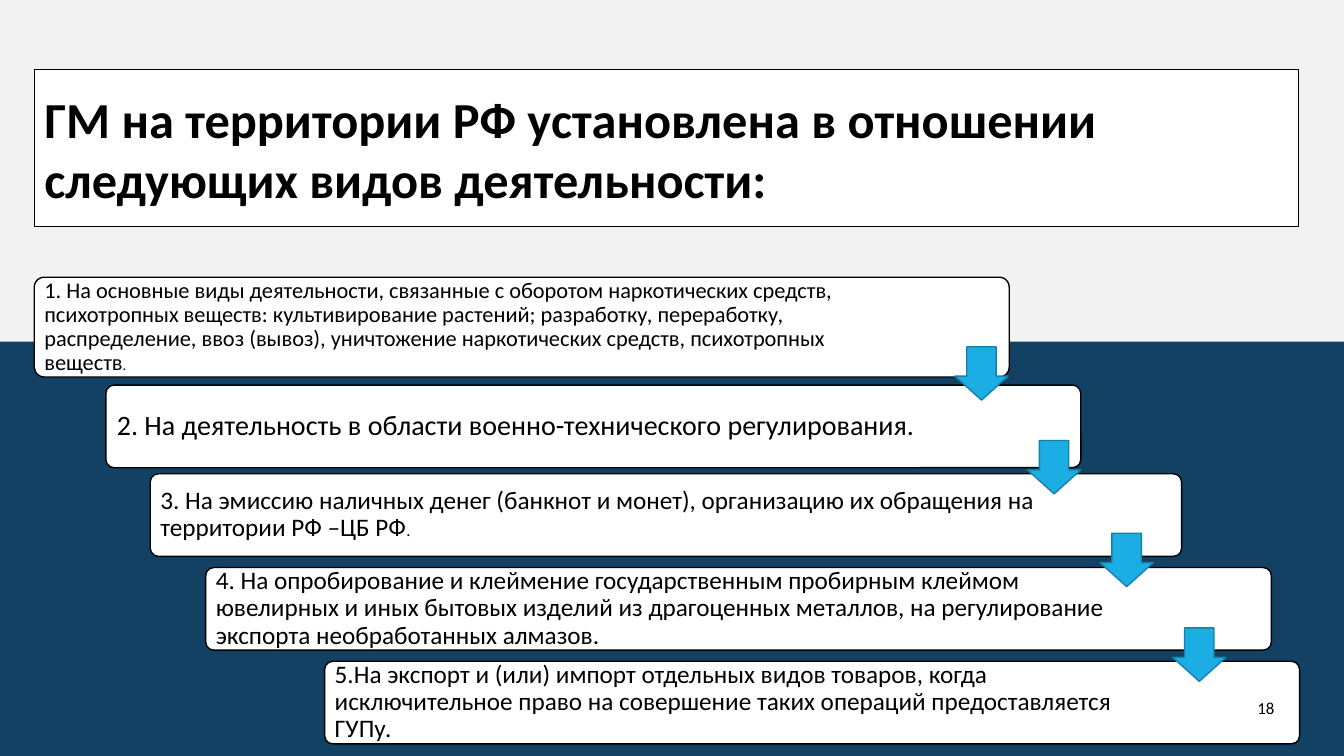
"""Build a slide with a staircase of five numbered activity cards."""
from dataclasses import dataclass

from pptx import Presentation
from pptx.dml.color import RGBColor
from pptx.enum.shapes import MSO_SHAPE as Preset
from pptx.enum.text import MSO_ANCHOR as Anchor, MSO_AUTO_SIZE as AutoSize, PP_ALIGN as Align
from pptx.shapes.autoshape import Shape
from pptx.slide import Slide
from pptx.util import Inches, Pt

NAVY = RGBColor(0x13, 0x41, 0x63)
PALE = RGBColor(0xF2, 0xF2, 0xF2)
WHITE = RGBColor(0xFF, 0xFF, 0xFF)
BLACK = RGBColor(0x00, 0x00, 0x00)
SKY = RGBColor(0x1C, 0xAD, 0xE4)
TEAL = RGBColor(0x15, 0x80, 0xA9)
FONT = "Calibri"
TEXT_GAP = 0.03
ARROW_SIZE = 0.53
ARROW_LEFT, ARROW_STEP = 9.47, 0.72


@dataclass(frozen=True)
class Span:
    text: str
    size: float
    bold: bool = False


@dataclass(frozen=True)
class Card:
    left: float
    top: float
    width: float
    height: float
    text_width: float
    spans: tuple[Span, ...]
    inset: float = 0.07


CARDS = (
    Card(0.34, 2.75, 9.67, 0.99, 8.68, (
        Span("1. На основные виды деятельности, связанные с оборотом наркотических средств, "
             "психотропных веществ: культивирование растений; разработку, переработку, "
             "распределение, ввоз (вывоз), уничтожение наркотических средств, "
             "психотропных веществ", 16),
        Span(".", 10.5))),
    Card(1.05, 3.82, 9.67, 0.82, 8.37, (
        Span("2. На деятельность в области военно-технического регулирования.", 20),), 0.08),
    Card(1.49, 4.7, 10.23, 0.82, 8.85, (
        Span("3. На эмиссию наличных денег (банкнот и монет), организацию их обращения "
             "на территории РФ –ЦБ РФ", 18),
        Span(".", 12))),
    Card(2.04, 5.63, 10.57, 0.82, 9.15, (
        Span("4. На опробирование и клеймение государственным пробирным клеймом ювелирных "
             "и иных бытовых изделий из драгоценных металлов, на регулирование экспорта "
             "необработанных алмазов.", 18),)),
    Card(3.22, 6.56, 9.67, 0.82, 8.37, (
        Span("5.На экспорт и (или) импорт отдельных видов товаров, когда исключительное "
             "право на совершение таких операций предоставляется ГУПу.", 18),)),
)
ARROW_TOPS = (3.44, 4.37, 5.29, 6.23)


def paint(shape: Shape, fill: RGBColor | None, line: RGBColor | None, weight: float = 1) -> None:
    """Set the fill and outline of a shape."""
    if fill is None:
        shape.fill.background()
    else:
        shape.fill.solid()
        shape.fill.fore_color.rgb = fill
    if line is None:
        shape.line.fill.background()
    else:
        shape.line.color.rgb = line
        shape.line.width = Pt(weight)


def add_preset(page: Slide, preset: Preset, left: float, top: float,
               width: float, height: float) -> Shape:
    """Add a shadowless preset shape."""
    shape = page.shapes.add_shape(preset, Inches(left), Inches(top), Inches(width), Inches(height))
    shape.shadow.inherit = False
    return shape


def write(shape: Shape, spans: tuple[Span, ...], inset_x: float, inset_y: float,
          align: Align = Align.LEFT, spacing: float = 1.0) -> None:
    """Fill a shape with one formatted paragraph."""
    frame = shape.text_frame
    frame_format = {
        "word_wrap": True, "auto_size": AutoSize.NONE, "vertical_anchor": Anchor.MIDDLE,
        "margin_left": Inches(inset_x), "margin_right": Inches(inset_x),
        "margin_top": Inches(inset_y), "margin_bottom": Inches(inset_y),
    }
    for name, value in frame_format.items():
        setattr(frame, name, value)
    para = frame.paragraphs[0]
    para.alignment = align
    para.line_spacing = spacing
    for span in spans:
        run = para.add_run()
        run.text = span.text
        for name, value in {"name": FONT, "size": Pt(span.size), "bold": span.bold}.items():
            setattr(run.font, name, value)
        run.font.color.rgb = BLACK


def add_title(page: Slide) -> None:
    """Place the framed heading in the title placeholder."""
    title = page.shapes.title
    box = {"left": 0.34, "top": 0.69, "width": 12.54, "height": 1.56}
    for name, value in box.items():
        setattr(title, name, Inches(value))
    paint(title, WHITE, BLACK)
    heading = "ГМ на территории РФ установлена в отношении следующих видов деятельности:"
    write(title, (Span(heading, 36, True),), 0.1, 0.05)


def add_card(page: Slide, card: Card) -> None:
    """Draw a rounded card and its text."""
    panel = add_preset(page, Preset.ROUNDED_RECTANGLE, card.left, card.top, card.width, card.height)
    panel.adjustments[0] = 0.1
    paint(panel, WHITE, BLACK)
    box = page.shapes.add_textbox(
        Inches(card.left + TEXT_GAP), Inches(card.top + TEXT_GAP),
        Inches(card.text_width), Inches(card.height - 2 * TEXT_GAP))
    write(box, card.spans, card.inset, card.inset, spacing=0.9)


def add_arrow(page: Slide, left: float, top: float) -> None:
    """Draw a down arrow between two cards."""
    arrow = add_preset(page, Preset.DOWN_ARROW, left, top, ARROW_SIZE, ARROW_SIZE)
    arrow.adjustments[0] = 0.55
    arrow.adjustments[1] = 0.45
    paint(arrow, SKY, TEAL)


def main() -> None:
    """Build and save the deck."""
    deck = Presentation()
    deck.slide_width, deck.slide_height = Inches(13.33), Inches(7.5)
    page = deck.slides.add_slide(deck.slide_layouts.get_by_name("Title Only"))
    page.background.fill.solid()
    page.background.fill.fore_color.rgb = NAVY
    band = add_preset(page, Preset.RECTANGLE, 0, 0, 13.33, 3.39)
    paint(band, PALE, None)
    page.shapes[0].element.addprevious(band.element)
    add_title(page)
    for card in CARDS:
        add_card(page, card)
    for step, top in enumerate(ARROW_TOPS):
        add_arrow(page, ARROW_LEFT + step * ARROW_STEP, top)
    badge = add_preset(page, Preset.OVAL, 12.34, 6.81, 0.43, 0.43)
    paint(badge, None, WHITE, 5)
    write(badge, (Span("18", 12),), 0, 0, Align.CENTER)
    deck.save("out.pptx")


if __name__ == "__main__":
    main()
